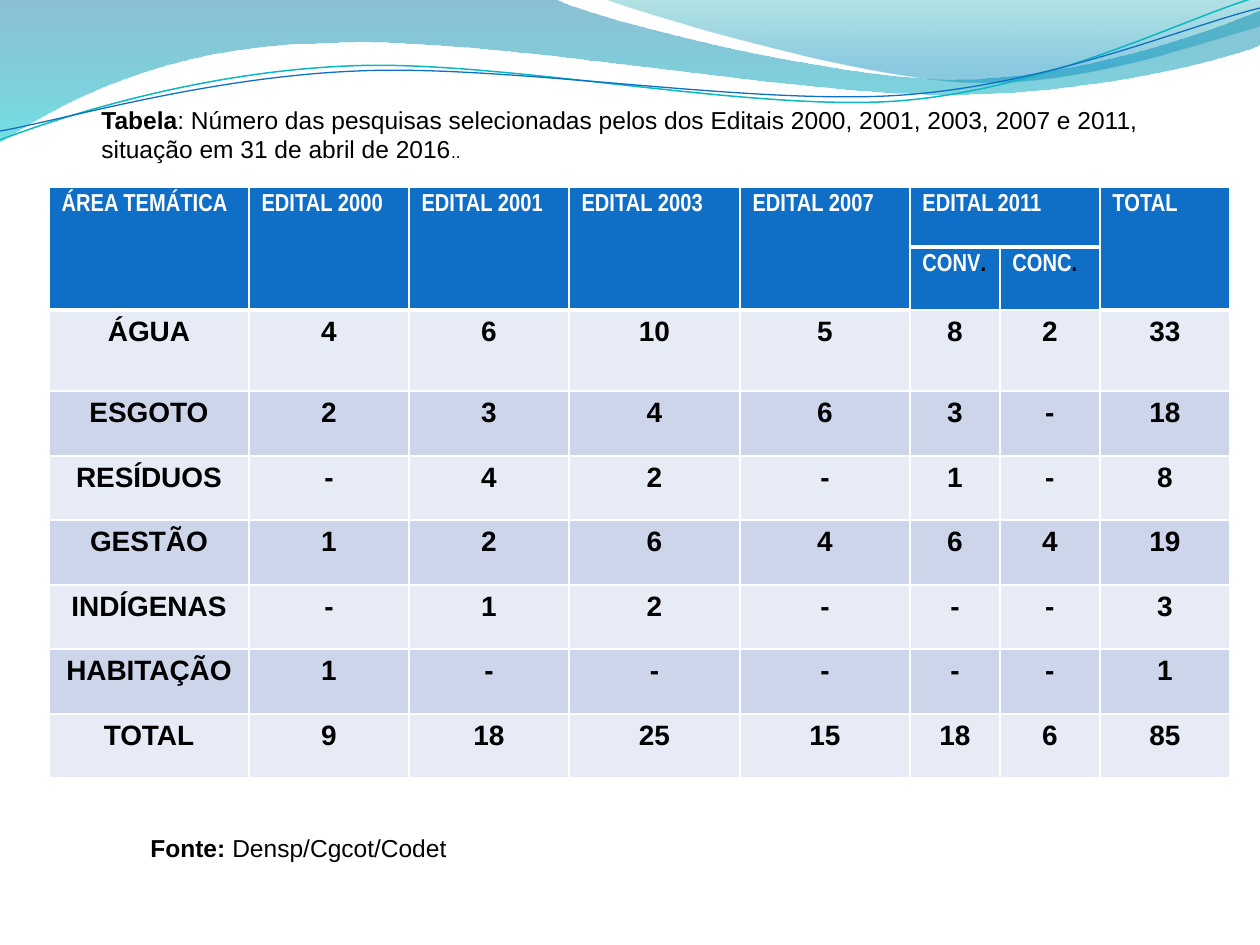
from math import cos, radians, sin

from lxml.etree import SubElement
from pptx import Presentation
from pptx.dml.color import RGBColor
from pptx.enum.text import MSO_ANCHOR, MSO_AUTO_SIZE, PP_ALIGN
from pptx.oxml.ns import qn
from pptx.util import Emu, Pt

PX = 914400 / 126
BLUE, WHITE, BLACK = "0F6FC6", "FFFFFF", "000000"
BANDS = ("E7EBF5", "CCD5EA")
HEADER = {"size": Pt(14), "name": "Arial Narrow", "bold": True}
BODY = {"size": Pt(16), "name": "Arial", "bold": True}
NOTE = {"size": Pt(14), "name": "Arial", "bold": False}
LABEL = {**NOTE, "bold": True}
SMALL = {"size": Pt(10)}

COLUMNS = (200, 160, 160, 171, 170, 90, 100, 130)
ROWS = (60, 63, 81) + (65, 64) * 3
HEADINGS = ("ÁREA TEMÁTICA", "EDITAL 2000", "EDITAL 2001", "EDITAL 2003", "EDITAL 2007")
COUNTS = (
    ("ÁGUA", "4", "6", "10", "5", "8", "2", "33"),
    ("ESGOTO", "2", "3", "4", "6", "3", "-", "18"),
    ("RESÍDUOS", "-", "4", "2", "-", "1", "-", "8"),
    ("GESTÃO", "1", "2", "6", "4", "6", "4", "19"),
    ("INDÍGENAS", "-", "1", "2", "-", "-", "-", "3"),
    ("HABITAÇÃO", "1", "-", "-", "-", "-", "-", "1"),
    ("TOTAL", "9", "18", "25", "15", "18", "6", "85"),
)

TILT = 2.7
TILT_CENTRE = (629, 73)
LEFT_WAVE = (
    (0, 0), (554, -1),
    (600, 21, 837, 79, 955, 79), (1075, 79, 1207, 33, 1260, 11), (1261, 45),
    (1239, 55, 1096, 96, 940, 94), (784, 94, 481, 35, 324, 43),
    (163, 45, 58, 105, -1, 142), (0, 0),
)
RIGHT_WAVE = (
    (604, -1), (641, 14, 859, 78, 969, 82),
    (1079, 87, 1211, 40, 1260, 26), (1260, 0), (604, -1),
)
TEAL_LINE = (
    (0, 140), (60, 117, 199, 72, 349, 66),
    (498, 59, 747, 112, 898, 101), (1050, 89, 1182, 19, 1257, -3),
)
BLUE_LINE = (
    (0, 131), (59, 121, 207, 77, 357, 71),
    (508, 64, 752, 106, 903, 95), (1053, 84, 1186, 26, 1260, 8),
)


def px(length):
    """Turn pixels into EMU."""
    return Emu(round(length * PX))


def rgb(value):
    """Turn a hex string into a colour."""
    return RGBColor.from_string(value)


def level(leg):
    """Turn the points of a leg clockwise by the tilt."""
    turned = []
    for x, y in zip(leg[::2], leg[1::2]):
        dx, dy = x - TILT_CENTRE[0], y - TILT_CENTRE[1]
        c, s = cos(radians(TILT)), sin(radians(TILT))
        turned += [TILT_CENTRE[0] + dx * c - dy * s, TILT_CENTRE[1] + dx * s + dy * c]
    return tuple(turned)


def add_outline(slide, route, close):
    """Draw a route of corners and cubic curves as a freeform without shadow."""
    ends = [(px(leg[-2]), px(leg[-1])) for leg in route]
    builder = slide.shapes.build_freeform(*ends[0])
    builder.add_line_segments(ends[1:], close=close)
    outline = builder.convert_to_shape()
    outline.shadow.inherit = False
    segments = list(outline._element.iter(qn("a:lnTo")))
    for segment, leg in zip(segments, route[1:]):
        if len(leg) == 6:
            segment.tag = qn("a:cubicBezTo")
            segment.clear()
            for x, y in zip(leg[::2], leg[1::2]):
                SubElement(segment, qn("a:pt"),
                           x=str(px(x) - outline.left), y=str(px(y) - outline.top))
    return outline


def add_wave(slide, route, stops):
    """Add a wave filled from top to bottom with translucent colours."""
    wave = add_outline(slide, route, True)
    wave.line.fill.background()
    wave.fill.gradient()
    wave.fill.gradient_angle = 270
    for stop, (position, colour, _) in zip(wave.fill.gradient_stops, stops):
        stop.position = position
        stop.color.rgb = rgb(colour)
    tints = wave._element.spPr.iter(qn("a:srgbClr"))
    for tint, (_, _, opacity) in zip(tints, stops):
        SubElement(tint, qn("a:alpha"), val=str(opacity * 1000))


def add_wave_line(slide, route, colour, width):
    """Add an open curved line, tilted as a whole."""
    curve = add_outline(slide, [level(leg) for leg in route], False)
    curve.rotation = 360 - TILT
    curve.fill.background()
    curve.line.color.rgb = rgb(colour)
    curve.line.width = Pt(width)


def write(paragraph, runs):
    """Write runs of text, colour and font format."""
    for words, colour, formats in runs:
        run = paragraph.add_run()
        run.text = words
        run.font.color.rgb = rgb(colour)
        for name, value in formats.items():
            setattr(run.font, name, value)


def add_note(slide, box, lines, frame_format):
    """Add a text box with one paragraph for each line."""
    frame = slide.shapes.add_textbox(*map(px, box)).text_frame
    for name, value in frame_format.items():
        setattr(frame, name, value)
    for index, runs in enumerate(lines):
        write(frame.add_paragraph() if index else frame.paragraphs[0], runs)


def border(cell, bottom):
    """Give a cell white borders, with its own bottom width."""
    properties = cell._tc.get_or_add_tcPr()
    for index, (side, width) in enumerate((("L", 1), ("R", 1), ("T", 1), ("B", bottom))):
        edge = properties.makeelement(qn(f"a:ln{side}"), {"w": str(Pt(width))})
        SubElement(SubElement(edge, qn("a:solidFill")), qn("a:srgbClr"), val=WHITE)
        properties.insert(index, edge)


def add_research_table(slide):
    """Add the table of selected research by theme and call."""
    table = slide.shapes.add_table(
        len(ROWS), len(COLUMNS), px(49), px(187), px(sum(COLUMNS)), px(sum(ROWS))).table
    for column, width in zip(table.columns, COLUMNS):
        column.width = px(width)
    for row, height in zip(table.rows, ROWS):
        row.height = px(height)
    for r in range(len(ROWS)):
        for c in range(len(COLUMNS)):
            cell = table.cell(r, c)
            cell.fill.solid()
            cell.fill.fore_color.rgb = rgb(BLUE if r < 2 else BANDS[r % 2])
            border(cell, 1 if r else 3)

    space = (" ", WHITE, {**HEADER, **SMALL})
    headings = {(0, c): [(words, WHITE, HEADER)] for c, words in enumerate(HEADINGS)}
    headings[0, 5] = [("EDITAL", WHITE, HEADER), space, ("2011", WHITE, HEADER), space]
    headings[0, 7] = [("TOTAL", WHITE, HEADER)]
    for c, words in ((5, "CONV"), (6, "CONC")):
        headings[1, c] = [(words, WHITE, HEADER), (".", BLACK, HEADER)]
    for place, runs in headings.items():
        write(table.cell(*place).text_frame.paragraphs[0], runs)
    for c in (0, 1, 2, 3, 4, 7):
        table.cell(0, c).merge(table.cell(1, c))
    table.cell(0, 5).merge(table.cell(0, 6))

    for r, counts in enumerate(COUNTS, 2):
        for c, words in enumerate(counts):
            paragraph = table.cell(r, c).text_frame.paragraphs[0]
            paragraph.alignment = PP_ALIGN.CENTER
            write(paragraph, [(words, BLACK, BODY)])


def main():
    """Build and save the slide."""
    deck = Presentation()
    deck.slide_width, deck.slide_height = px(1260), px(945)
    slide = deck.slides.add_slide(deck.slide_layouts[6])
    add_wave(slide, LEFT_WAVE, ((0, "0074A1", 45), (1, "00C6CF", 55)))
    add_wave(slide, RIGHT_WAVE, ((0, "00A1A9", 30), (0.8, "008BBF", 45)))
    add_wave_line(slide, TEAL_LINE, "0AB8BF", 0.85)
    add_wave_line(slide, BLUE_LINE, BLUE, 0.75)
    grow = {"auto_size": MSO_AUTO_SIZE.SHAPE_TO_FIT_TEXT}
    add_note(slide, (89, 98, 1094, 72), (
        [("Tabela", BLACK, LABEL),
         (": Número das pesquisas selecionadas pelos dos Editais 2000, 2001, 2003, 2007 e 2011,",
          BLACK, NOTE)],
        [("situação em 31 de abril de 2016", BLACK, NOTE), ("..", BLACK, {**NOTE, **SMALL})],
    ), {**grow, "word_wrap": False, "vertical_anchor": MSO_ANCHOR.MIDDLE})
    add_note(slide, (138, 827, 323, 43), (
        [("Fonte: ", BLACK, LABEL), ("Densp/Cgcot/Codet", BLACK, NOTE)],
    ), {**grow, "word_wrap": True})
    add_research_table(slide)
    deck.save("out.pptx")


if __name__ == "__main__":
    main()
